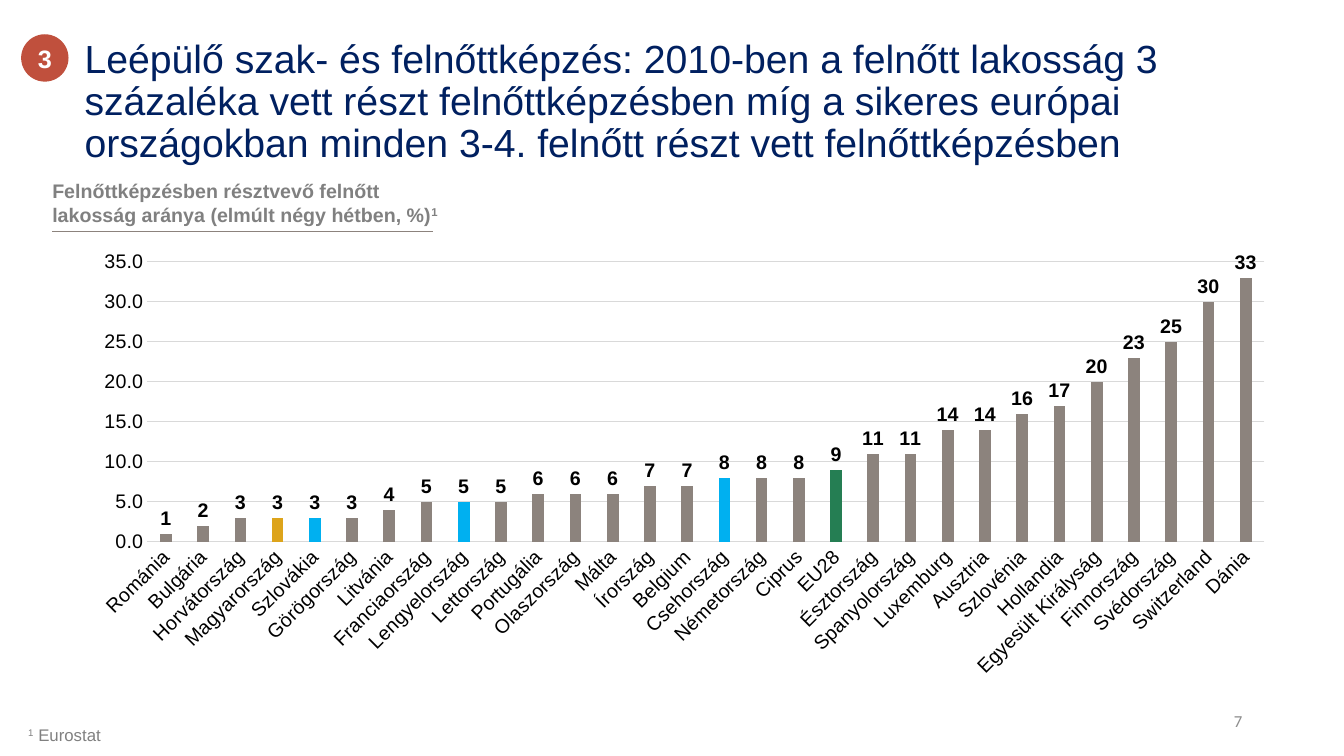
from dataclasses import dataclass
from typing import Optional

from lxml import etree
from pptx import Presentation
from pptx import util as u
from pptx.chart import data as chart_data
from pptx.dml.color import RGBColor
from pptx.enum import chart as ch
from pptx.enum import shapes, text
from pptx.oxml.ns import qn

PX = 9144

NAVY = RGBColor(0x00, 0x20, 0x60)
GREY = RGBColor(0x80, 0x80, 0x80)
PAGE_GREY = RGBColor(0x8C, 0x8C, 0x8C)
TAUPE = RGBColor(0x8C, 0x83, 0x7D)
GRID_GREY = RGBColor(0xD9, 0xD9, 0xD9)
BLACK = RGBColor(0x00, 0x00, 0x00)
WHITE = RGBColor(0xFF, 0xFF, 0xFF)
RED = RGBColor(0xC0, 0x50, 0x3D)
GOLD = RGBColor(0xDD, 0xA4, 0x1B)
BLUE = RGBColor(0x00, 0xB0, 0xF0)
GREEN = RGBColor(0x25, 0x7E, 0x53)


@dataclass(frozen=True)
class Piece:
    words: str
    raised: bool = False


@dataclass(frozen=True)
class Caption:
    left: int
    top: int
    width: int
    height: int
    pieces: tuple[Piece, ...]
    size: int
    color: RGBColor
    font: str = "Arial"
    bold: bool = False
    align: Optional[text.PP_ALIGN] = None
    anchor: text.MSO_ANCHOR = text.MSO_ANCHOR.TOP
    spacing: Optional[float] = None
    inset: Optional[int] = None


@dataclass(frozen=True)
class Country:
    name: str
    share: int
    color: RGBColor = TAUPE


CAPTIONS = (
    Caption(942, 695, 300, 40, (Piece("7"),), 12, PAGE_GREY, font="Calibri",
            align=text.PP_ALIGN.RIGHT, anchor=text.MSO_ANCHOR.MIDDLE),
    Caption(74, 34, 1240, 101,
            (Piece("Leépülő szak- és felnőttképzés: 2010-ben a felnőtt lakosság 3 "
                   "százaléka vett részt felnőttképzésben míg a sikeres európai "
                   "országokban minden 3-4. felnőtt részt vett felnőttképzésben"),),
            28, NAVY, spacing=0.9),
    Caption(42, 173, 429, 86,
            (Piece("Felnőttképzésben résztvevő felnőtt lakosság aránya "
                   "(elmúlt négy hétben, %)"), Piece("1", raised=True)),
            14, GREY, bold=True),
    Caption(28, 719, 787, 20, (Piece("1", raised=True), Piece(" Eurostat")),
            12, GREY, anchor=text.MSO_ANCHOR.BOTTOM, inset=0),
)

COUNTRIES = (
    Country("Románia", 1), Country("Bulgária", 2), Country("Horvátország", 3),
    Country("Magyarország", 3, GOLD), Country("Szlovákia", 3, BLUE),
    Country("Görögország", 3), Country("Litvánia", 4), Country("Franciaország", 5),
    Country("Lengyelország", 5, BLUE), Country("Lettország", 5),
    Country("Portugália", 6), Country("Olaszország", 6), Country("Málta", 6),
    Country("Írország", 7), Country("Belgium", 7), Country("Csehország", 8, BLUE),
    Country("Németország", 8), Country("Ciprus", 8), Country("EU28", 9, GREEN),
    Country("Észtország", 11), Country("Spanyolország", 11),
    Country("Luxemburg", 14), Country("Ausztria", 14), Country("Szlovénia", 16),
    Country("Hollandia", 17), Country("Egyesült Királyság", 20),
    Country("Finnország", 23), Country("Svédország", 25),
    Country("Switzerland", 30), Country("Dánia", 33),
)


def px(*lengths: int) -> list[u.Emu]:
    return [u.Emu(length * PX) for length in lengths]


def style(font, size: int, color: RGBColor, name: str = "Arial",
          bold: bool = False) -> None:
    font.size = u.Pt(size)
    font.name = name
    font.bold = bold
    font.color.rgb = color


def draw_caption(slide, caption: Caption) -> None:
    box = slide.shapes.add_textbox(
        *px(caption.left, caption.top, caption.width, caption.height))
    frame = box.text_frame
    frame.word_wrap = True
    frame.vertical_anchor = caption.anchor
    if caption.inset is not None:
        inset, = px(caption.inset)
        frame.margin_left = frame.margin_right = inset
        frame.margin_top = frame.margin_bottom = inset
    paragraph = frame.paragraphs[0]
    paragraph.alignment = caption.align
    paragraph.line_spacing = caption.spacing
    for piece in caption.pieces:
        run = paragraph.add_run()
        run.text = piece.words
        style(run.font, caption.size, caption.color, caption.font, caption.bold)
        if piece.raised:
            run.font._element.set("baseline", "30000")


def draw_badge(slide) -> None:
    badge = slide.shapes.add_shape(shapes.MSO_SHAPE.OVAL, *px(21, 34, 47, 47))
    badge.shadow.inherit = False
    badge.fill.solid()
    badge.fill.fore_color.rgb = RED
    badge.line.fill.background()
    frame = badge.text_frame
    frame.margin_left = frame.margin_right = 0
    frame.vertical_anchor = text.MSO_ANCHOR.MIDDLE
    frame.text = "3"
    number = frame.paragraphs[0]
    number.alignment = text.PP_ALIGN.CENTER
    style(number.runs[0].font, 18, WHITE, bold=True)


def draw_underline(slide) -> None:
    underline = slide.shapes.add_connector(
        shapes.MSO_CONNECTOR.STRAIGHT, *px(52, 230, 429, 230))
    underline.line.color.rgb = TAUPE
    underline.line.width = u.Pt(0.5)
    etree.SubElement(underline._element.spPr, qn("a:effectLst"))


def draw_chart(slide) -> None:
    shares = chart_data.CategoryChartData()
    shares.categories = [country.name for country in COUNTRIES]
    shares.add_series("Series 1", [country.share for country in COUNTRIES])
    chart = slide.shapes.add_chart(
        ch.XL_CHART_TYPE.COLUMN_CLUSTERED, *px(74, 240, 1204, 441), shares).chart
    chart.has_legend = False
    chart.has_title = False
    style(chart.font, 14, BLACK)

    plot = chart.plots[0]
    plot.vary_by_categories = False
    plot.gap_width = 219
    plot.overlap = -27
    series = plot.series[0]
    series.format.fill.solid()
    series.format.fill.fore_color.rgb = TAUPE
    for index, country in enumerate(COUNTRIES):
        if country.color != TAUPE:
            fill = series.points[index].format.fill
            fill.solid()
            fill.fore_color.rgb = country.color

    labels = series.data_labels
    labels.show_value = True
    labels.position = ch.XL_LABEL_POSITION.OUTSIDE_END
    labels.number_format = "#,##0"
    labels.number_format_is_linked = False
    style(labels.font, 14, BLACK, bold=True)

    names, scale = chart.category_axis, chart.value_axis
    for axis in (names, scale):
        axis.major_tick_mark = ch.XL_TICK_MARK.NONE
        style(axis.tick_labels.font, 14, BLACK)
    names._element.find(qn("c:txPr")).find(qn("a:bodyPr")).set("rot", "-2700000")
    scale.minimum_scale, scale.maximum_scale, scale.major_unit = 0, 35, 5
    scale.tick_labels.number_format = "#\\ ##0.0"
    scale.tick_labels.number_format_is_linked = False
    scale.format.line.fill.background()
    for line in (names.format.line, scale.major_gridlines.format.line):
        line.color.rgb = GRID_GREY
        line.width = u.Pt(0.75)


def main() -> None:
    deck = Presentation()
    deck.slide_width, deck.slide_height = px(1333, 750)
    slide = deck.slides.add_slide(deck.slide_layouts[6])
    for caption in CAPTIONS:
        draw_caption(slide, caption)
    draw_chart(slide)
    draw_underline(slide)
    draw_badge(slide)
    deck.save("out.pptx")


if __name__ == "__main__":
    main()
